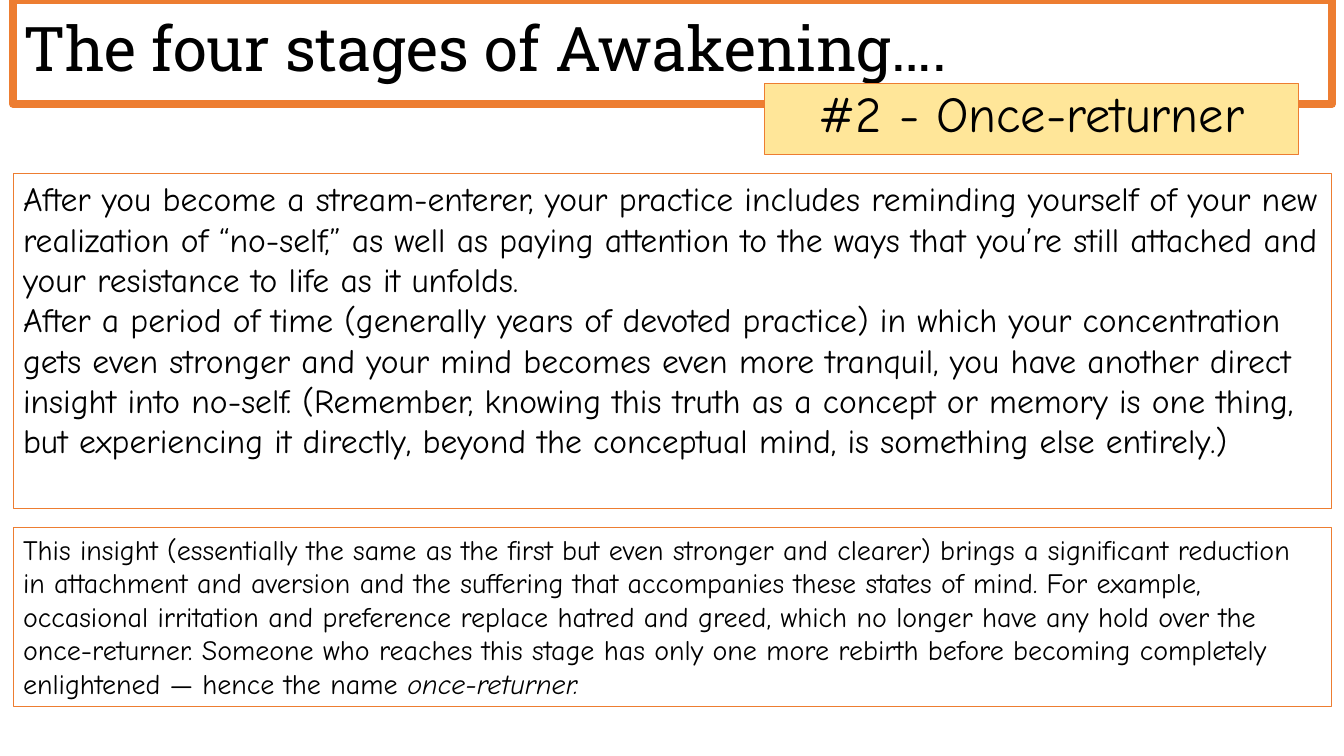
from dataclasses import dataclass

from pptx import Presentation
from pptx.dml.color import RGBColor
from pptx.enum import shapes, text
from pptx.util import Inches, Pt


@dataclass(frozen=True)
class Theme:
    ink: RGBColor = RGBColor(0x00, 0x00, 0x00)
    orange: RGBColor = RGBColor(0xED, 0x7D, 0x31)
    yellow: RGBColor = RGBColor(0xFF, 0xE6, 0x99)
    title_font: str = "Roboto Slab"
    body_font: str = "Comic Neue"
    title_size: int = 44
    stage_size: int = 36
    practice_size: int = 24
    insight_size: int = 20
    thin: float = 0.75
    thick: float = 6


THEME = Theme()
LEFT, WIDTH = 0.13, 13.08

TITLE = "The four stages of Awakening…."
STAGE = "#2 - Once-returner"
PRACTICE = [
    "After you become a stream-enterer, your practice includes reminding "
    "yourself of your new realization of “no-self,” as well as paying "
    "attention to the ways that you’re still attached and your resistance "
    "to life as it unfolds.",
    "After a period of time (generally years of devoted practice) in which "
    "your concentration gets even stronger and your mind becomes even more "
    "tranquil, you have another direct insight into no-self. (Remember, "
    "knowing this truth as a concept or memory is one thing, but "
    "experiencing it directly, beyond the conceptual mind, is something "
    "else entirely.)",
]
INSIGHT = (
    "This insight (essentially the same as the first but even stronger and "
    "clearer) brings a significant reduction in attachment and aversion and "
    "the suffering that accompanies these states of mind. For example, "
    "occasional irritation and preference replace hatred and greed, which no "
    "longer have any hold over the once-returner. Someone who reaches this "
    "stage has only one more rebirth before becoming completely enlightened "
    "— hence the name "
)
INSIGHT_TERM = "once-returner."


def add_box(s, left, top, width, height, line_width=THEME.thin, fill=None):
    """Add an outlined rectangle that holds text."""
    sp = s.shapes.add_shape(shapes.MSO_SHAPE.RECTANGLE, Inches(left),
                            Inches(top), Inches(width), Inches(height))
    sp.shadow.inherit = False
    sp.line.color.rgb = THEME.orange
    sp.line.width = Pt(line_width)
    if fill is None:
        sp.fill.background()
    else:
        sp.fill.solid()
        sp.fill.fore_color.rgb = fill
    sp.text_frame.word_wrap = True
    sp.text_frame.vertical_anchor = text.MSO_ANCHOR.TOP
    return sp


def format_run(r, size, font):
    r.font.size = Pt(size)
    r.font.name = font
    r.font.color.rgb = THEME.ink


def write(sp, paragraphs, size, font=THEME.body_font,
          align=text.PP_ALIGN.LEFT, line_spacing=1.0):
    """Fill a box with paragraphs in one style and return its text frame."""
    tf = sp.text_frame
    tf.text = "\n".join(paragraphs)
    for p in tf.paragraphs:
        p.alignment = align
        p.line_spacing = line_spacing
        for r in p.runs:
            format_run(r, size, font)
    return tf


def main():
    prs = Presentation()
    prs.slide_width, prs.slide_height = Inches(13.33), Inches(7.5)
    s = prs.slides.add_slide(prs.slide_layouts[6])

    # Title banner
    title = add_box(s, LEFT, 0, WIDTH, 1.03, THEME.thick)
    tf = write(title, [TITLE], THEME.title_size, THEME.title_font,
               line_spacing=0.9)
    tf.vertical_anchor = text.MSO_ANCHOR.MIDDLE

    # Stage label over the banner's edge
    stage = add_box(s, 7.58, 0.83, 5.3, 0.7, fill=THEME.yellow)
    tf = write(stage, [STAGE], THEME.stage_size,
               align=text.PP_ALIGN.CENTER, line_spacing=0.9)
    tf.paragraphs[0].space_before = Pt(10)

    # Practice leading to this stage
    practice = add_box(s, LEFT, 1.72, WIDTH, 3.33)
    write(practice, PRACTICE, THEME.practice_size)

    # What the insight changes, ending in the italic term
    insight = add_box(s, LEFT, 5.23, WIDTH, 1.78)
    tf = write(insight, [INSIGHT], THEME.insight_size)
    r = tf.paragraphs[0].add_run()
    r.text = INSIGHT_TERM
    format_run(r, THEME.insight_size, THEME.body_font)
    r.font.italic = True

    prs.save("out.pptx")


if __name__ == "__main__":
    main()
